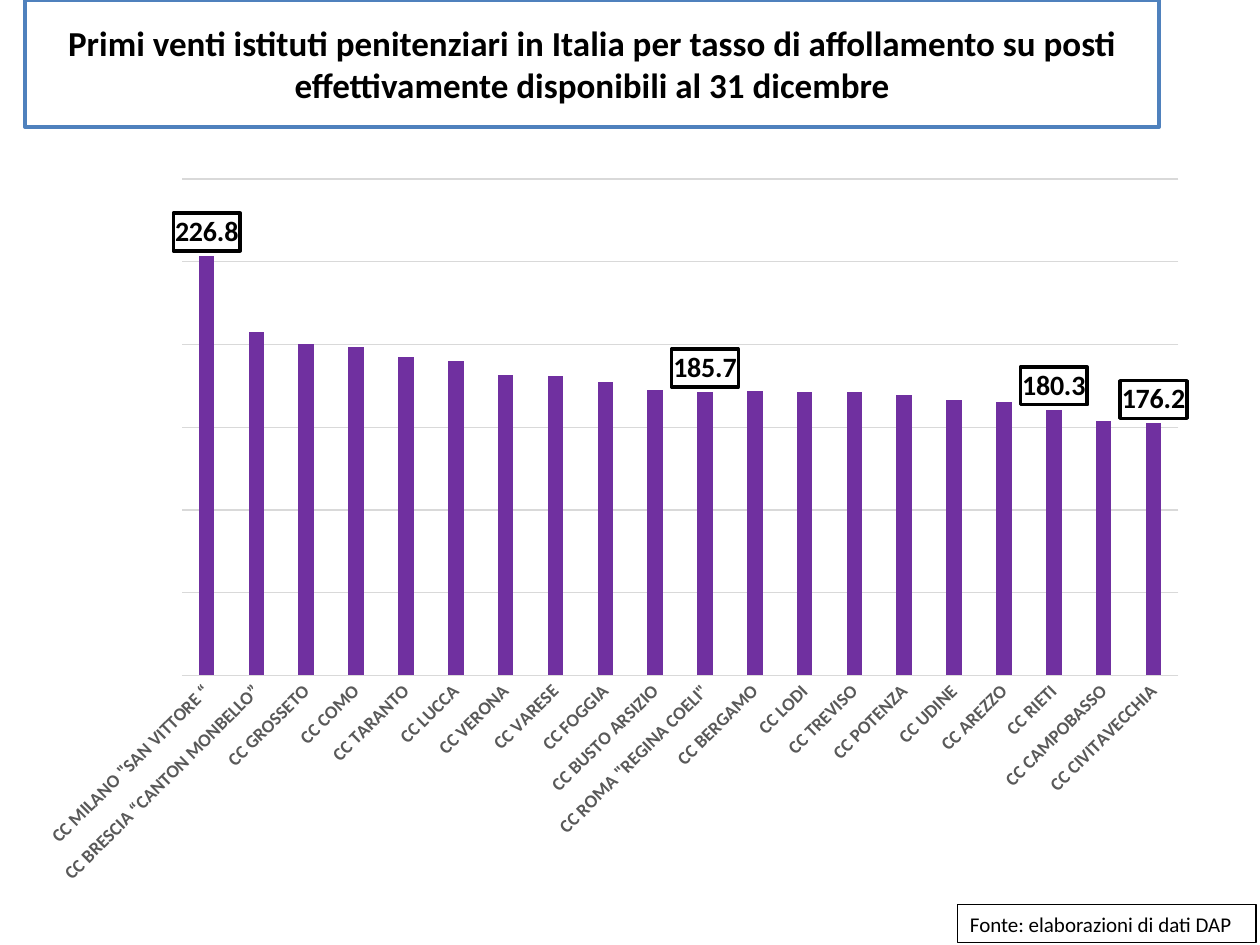
from lxml import etree
from pptx import Presentation
from pptx.chart.data import CategoryChartData
from pptx.dml.color import RGBColor
from pptx.enum.chart import XL_CHART_TYPE, XL_LABEL_POSITION, XL_TICK_MARK
from pptx.enum.shapes import MSO_SHAPE
from pptx.enum.text import MSO_ANCHOR, PP_ALIGN
from pptx.oxml import parse_xml
from pptx.oxml.ns import nsdecls, qn
from pptx.util import Pt

COLORS = {
    "white": "FFFFFF", "black": "000000", "blue": "4F81BD",
    "purple": "7030A0", "gray": "595959", "grid": "D9D9D9",
}

JAILS = [
    ('CC MILANO "SAN VITTORE “', 226.8),
    ("CC BRESCIA “CANTON MONBELLO”", 203.85),
    ("CC GROSSETO", 200),
    ("CC COMO", 199.11),
    ("CC TARANTO", 196.07),
    ("CC LUCCA", 195.12),
    ("CC VERONA", 190.88),
    ("CC VARESE", 190.57),
    ("CC FOGGIA", 188.7),
    ("CC BUSTO ARSIZIO", 186.34),
    ('CC ROMA "REGINA COELI"', 185.7),
    ("CC BERGAMO", 185.85),
    ("CC LODI", 185.71),
    ("CC TREVISO", 185.71),
    ("CC POTENZA", 184.62),
    ("CC UDINE", 183.16),
    ("CC AREZZO", 182.61),
    ("CC RIETI", 180.3),
    ("CC CAMPOBASSO", 176.84),
    ("CC CIVITAVECCHIA", 176.2),
]
MARKED = (0, 10, 17, 19)


def color(name):
    return RGBColor.from_string(COLORS[name])


class Deck:
    def __init__(self, font):
        self.font = font
        self.prs = Presentation()
        self.prs.slide_width, self.prs.slide_height = Pt(720), Pt(540)
        self.slide = self.prs.slides.add_slide(self.prs.slide_layouts[6])

    def style(self, font, size, tint, bold=False):
        font.name, font.size, font.bold = self.font, Pt(size), bold
        font.color.rgb = color(tint)

    def box(self, area, text, size, line, width, bold=False,
            align=PP_ALIGN.LEFT, wrap=True):
        shape = self.slide.shapes.add_shape(
            MSO_SHAPE.RECTANGLE, *[Pt(n) for n in area])
        shape.shadow.inherit = False
        shape.fill.solid()
        shape.fill.fore_color.rgb = color("white")
        shape.line.color.rgb = color(line)
        shape.line.width = Pt(width)
        frame = shape.text_frame
        frame.word_wrap = wrap
        frame.vertical_anchor = MSO_ANCHOR.MIDDLE
        para = frame.paragraphs[0]
        para.alignment = align
        run = para.add_run()
        run.text = text
        self.style(run.font, size, "black", bold)

    def chart(self, area, rows, marks):
        data = CategoryChartData()
        data.categories = [name for name, _ in rows]
        data.add_series("Series 1", [rate for _, rate in rows])
        chart = self.slide.shapes.add_chart(
            XL_CHART_TYPE.COLUMN_CLUSTERED, *[Pt(n) for n in area], data).chart
        chart.has_legend = chart.has_title = False
        self.style(chart.font, 10, "black")
        self.axes(chart)
        self.place(chart, x=0.134, y=0.019, w=0.846, h=0.676)

        # Columns
        plot = chart.plots[0]
        plot.gap_width, plot.overlap = 219, -27
        plot.vary_by_categories = False
        bars = plot.series[0]
        bars.format.fill.solid()
        bars.format.fill.fore_color.rgb = color("purple")
        bars.data_labels.show_value = False
        for mark in marks:
            self.label(bars.points[mark].data_label)

    def axes(self, chart):
        cats, vals = chart.category_axis, chart.value_axis
        cats.major_tick_mark = cats.minor_tick_mark = XL_TICK_MARK.NONE
        self.style(cats.tick_labels.font, 10.5, "gray", True)
        body = cats._element.find(qn("c:txPr")).find(qn("a:bodyPr"))
        body.set("rot", "-2700000")
        vals.visible = False
        vals.minimum_scale, vals.maximum_scale = 100, 250
        vals.major_unit = 25
        vals.has_major_gridlines = True
        for line in (cats.format.line, vals.major_gridlines.format.line):
            line.color.rgb = color("grid")
            line.width = Pt(0.75)

    def place(self, chart, **spots):
        area = chart._chartSpace.chart.plotArea
        for old in area.findall(qn("c:layout")):
            area.remove(old)
        layout = etree.Element(qn("c:layout"))
        area.insert(0, layout)
        inner = etree.SubElement(layout, qn("c:manualLayout"))
        parts = {"layoutTarget": "inner", "xMode": "edge", "yMode": "edge"}
        for tag, val in {**parts, **spots}.items():
            etree.SubElement(inner, qn("c:" + tag)).set("val", str(val))

    def label(self, label):
        self.style(label.font, 16, "black", True)
        label.position = XL_LABEL_POSITION.OUTSIDE_END
        frame = parse_xml(
            f'<c:spPr {nsdecls("c", "a")}>'
            f'<a:solidFill><a:srgbClr val="{COLORS["white"]}"/></a:solidFill>'
            f'<a:ln w="{Pt(2)}"><a:solidFill>'
            f'<a:srgbClr val="{COLORS["black"]}"/></a:solidFill></a:ln></c:spPr>')
        node = label._dLbl
        for old in node.findall(qn("c:spPr")):
            node.remove(old)
        node.find(qn("c:txPr")).addprevious(frame)


def main():
    deck = Deck("Calibri")
    # Title
    deck.box((14.4, 0, 648, 72.7),
             "Primi venti istituti penitenziari in Italia per tasso di "
             "affollamento su posti effettivamente disponibili al 31 dicembre",
             20, "blue", 2, bold=True, align=PP_ALIGN.CENTER)
    # Source note
    deck.box((547.2, 517, 170.6, 21.6), "Fonte: elaborazioni di dati DAP",
             12, "black", 0.75, wrap=False)
    # Crowding rates
    deck.chart((13.7, 94.3, 673.2, 419.8), JAILS, MARKED)
    deck.prs.save("out.pptx")


if __name__ == "__main__":
    main()
